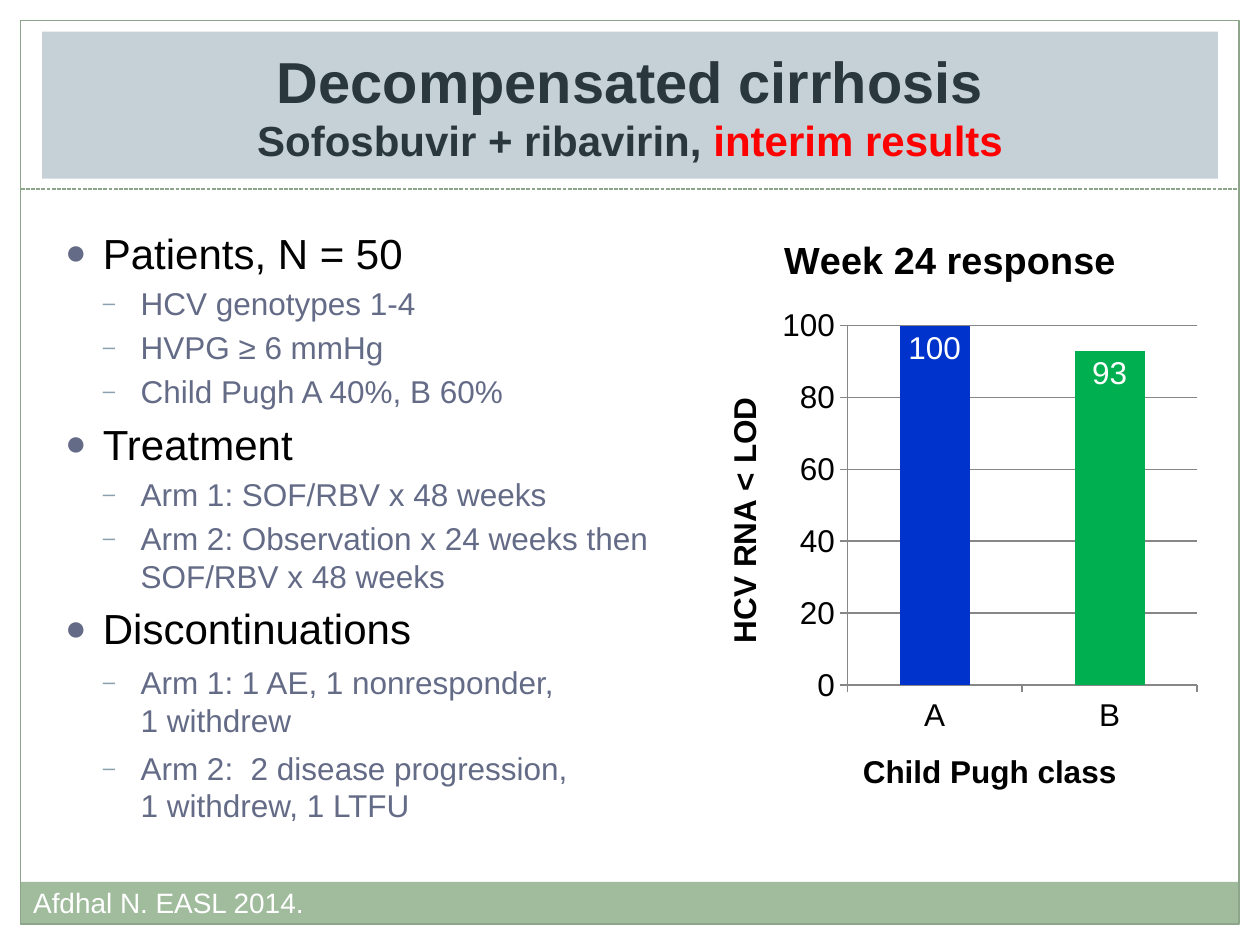
from lxml.etree import SubElement
from pptx import Presentation
from pptx.chart.data import CategoryChartData
from pptx.dml.color import RGBColor
from pptx.enum.chart import XL_CHART_TYPE, XL_LABEL_POSITION, XL_TICK_MARK
from pptx.enum.dml import MSO_LINE
from pptx.enum.shapes import MSO_CONNECTOR, MSO_SHAPE
from pptx.enum.text import MSO_ANCHOR, MSO_AUTO_SIZE, PP_ALIGN
from pptx.oxml import parse_xml
from pptx.oxml.ns import nsdecls, qn
from pptx.util import Cm, Pt

FONT = "Arial"
SAGE, SAGE_LINE = "A0BC9D", "8DA68B"
SLATE, GREY = "646B86", "878787"
MARGIN, WIDTH, HEIGHT = 0.42, 25.4, 19.05

# level: (text size, text colour, bullet, bullet colour, bullet size %, indent in cm)
LEVELS = [
    (24, "000000", "●", SLATE, 85, 0.76),
    (18, SLATE, "–", "88A1AD", 70, 1.52),
]
HANGING = 0.76

FINDINGS = [
    ("Patients, N = 50",
     ["HCV genotypes 1-4", "HVPG ≥ 6 mmHg", "Child Pugh A 40%, B 60%"]),
    ("Treatment",
     ["Arm 1: SOF/RBV x 48 weeks",
      "Arm 2: Observation x 24 weeks then SOF/RBV x 48 weeks"]),
    ("Discontinuations",
     ["Arm 1: 1 AE, 1 nonresponder, \v1 withdrew",
      "Arm 2:  2 disease progression, \v1 withdrew, 1 LTFU"]),
]


def rgb(color):
    return RGBColor.from_string(color)


def style_font(font, size, color, bold=False):
    font.name, font.size, font.bold = FONT, Pt(size), bold
    font.color.rgb = rgb(color)


def place(shape, left, top, width, height):
    shape.left, shape.top = Cm(left), Cm(top)
    shape.width, shape.height = Cm(width), Cm(height)


def add_box(slide, left, top, width, height, fill=None, line=None):
    box = slide.shapes.add_shape(
        MSO_SHAPE.RECTANGLE, Cm(left), Cm(top), Cm(width), Cm(height))
    box.shadow.inherit = False
    if fill:
        box.fill.solid()
        box.fill.fore_color.rgb = rgb(fill)
    else:
        box.fill.background()
    if line:
        box.line.color.rgb = rgb(line)
        box.line.width = Pt(0.75)
    else:
        box.line.fill.background()


def add_frame(slide):
    """Draw the footer band, the page border and the dashed rule under the title."""
    inner_width = WIDTH - 2 * MARGIN
    add_box(slide, MARGIN, 17.78, inner_width, 0.86, fill=SAGE)
    add_box(slide, MARGIN, MARGIN, inner_width, HEIGHT - 2 * MARGIN, line=SAGE_LINE)
    rule = slide.shapes.add_connector(
        MSO_CONNECTOR.STRAIGHT, Cm(MARGIN), Cm(3.81), Cm(WIDTH - MARGIN), Cm(3.81))
    rule.line.color.rgb = rgb(SAGE_LINE)
    rule.line.width = Pt(0.75)
    rule.line.dash_style = MSO_LINE.SQUARE_DOT
    SubElement(rule._element.spPr, qn("a:effectLst"))


def fill_title(title):
    place(title, 0.85, 0.64, 23.7, 2.96)
    title.fill.solid()
    title.fill.fore_color.rgb = rgb("C5D1D7")
    frame = title.text_frame
    frame.auto_size = MSO_AUTO_SIZE.NONE
    frame.vertical_anchor = MSO_ANCHOR.MIDDLE
    heading = frame.paragraphs[0]
    heading.alignment = PP_ALIGN.CENTER
    heading.text = "Decompensated cirrhosis\vSofosbuvir + ribavirin, "
    heading.add_run().text = "interim results"
    looks = [(33, "2A373D"), (24, "2A373D"), (24, "FF0000")]
    for run, (size, color) in zip(heading.runs, looks):
        style_font(run.font, size, color, bold=True)


def format_item(paragraph, level):
    size, color, bullet, bullet_color, bullet_size, indent = LEVELS[level]
    paragraph.level = level
    for run in paragraph.runs:
        style_font(run.font, size, color)
    properties = paragraph._p.get_or_add_pPr()
    properties.set("marL", str(Cm(indent)))
    properties.set("indent", str(-Cm(HANGING)))
    SubElement(SubElement(properties, qn("a:buClr")), qn("a:srgbClr"), val=bullet_color)
    SubElement(properties, qn("a:buSzPct"), val=str(bullet_size * 1000))
    SubElement(properties, qn("a:buFont"), typeface=FONT)
    SubElement(properties, qn("a:buChar"), char=bullet)


def fill_findings(body):
    place(body, 1.06, 4.45, 12.5, 13.13)
    frame = body.text_frame
    frame.auto_size = MSO_AUTO_SIZE.NONE
    items = [(text, level) for topic, details in FINDINGS
             for text, level in [(topic, 0)] + [(detail, 1) for detail in details]]
    for number, (text, level) in enumerate(items):
        paragraph = frame.add_paragraph() if number else frame.paragraphs[0]
        paragraph.text = text
        format_item(paragraph, level)


def add_citation(slide, text):
    citation = slide.shapes.add_textbox(Cm(MARGIN), Cm(17.73), Cm(24.13), Cm(0.94))
    citation.text_frame.word_wrap = True
    citation.text_frame.text = text
    style_font(citation.text_frame.paragraphs[0].runs[0].font, 16, "FFFFFF")


def set_chart_title(owner, text, size):
    """Title a chart or one of its axes."""
    owner.has_title = True
    frame = (owner.chart_title if hasattr(owner, "chart_title")
             else owner.axis_title).text_frame
    frame.text = text
    style_font(frame.paragraphs[0].runs[0].font, size, "000000", bold=True)


def format_axis(axis, title):
    set_chart_title(axis, title, 18)
    style_font(axis.tick_labels.font, 18, "000000")
    axis.major_tick_mark = XL_TICK_MARK.OUTSIDE
    axis.minor_tick_mark = XL_TICK_MARK.NONE
    axis.format.line.color.rgb = rgb(GREY)


def set_plot_area(chart, **fractions):
    """Fix the inner plot area as fractions x, y, w and h of the chart."""
    area = chart._chartSpace.chart.plotArea
    for layout in area.findall(qn("c:layout")):
        area.remove(layout)
    sizes = "".join(f'<c:{side} val="{value}"/>' for side, value in fractions.items())
    area.insert(0, parse_xml(
        f'<c:layout {nsdecls("c")}><c:manualLayout><c:layoutTarget val="inner"/>'
        f'<c:xMode val="edge"/><c:yMode val="edge"/>{sizes}'
        '</c:manualLayout></c:layout>'))


def add_response_chart(slide):
    data = CategoryChartData()
    data.categories = ["A", "B"]
    data.add_series("Series 1", [100, 93])
    chart = slide.shapes.add_chart(
        XL_CHART_TYPE.COLUMN_CLUSTERED, Cm(13.97), Cm(4.23), Cm(10.37), Cm(12.28),
        data).chart
    style_font(chart.font, 18, "000000")
    chart.has_legend = False
    set_chart_title(chart, "Week 24 response", 21.6)
    format_axis(chart.category_axis, "Child Pugh class")
    response_axis = chart.value_axis
    format_axis(response_axis, "HCV RNA < LOD")
    response_axis.minimum_scale, response_axis.maximum_scale = 0, 100
    response_axis.major_unit = 20
    response_axis.has_major_gridlines = True
    response_axis.major_gridlines.format.line.color.rgb = rgb(GREY)

    plot = chart.plots[0]
    plot.gap_width = 150
    plot.vary_by_categories = False
    response = plot.series[0]
    for number, color in enumerate(["0033CC", "00B050"]):
        bar = response.points[number].format.fill
        bar.solid()
        bar.fore_color.rgb = rgb(color)
    labels = response.data_labels
    labels.show_value = True
    labels.position = XL_LABEL_POSITION.INSIDE_END
    style_font(labels.font, 18, "FFFFFF")
    set_plot_area(chart, x=0.3, y=0.19, w=0.68, h=0.59)


def main():
    presentation = Presentation()
    presentation.slide_width, presentation.slide_height = Cm(WIDTH), Cm(HEIGHT)
    slide = presentation.slides.add_slide(presentation.slide_layouts[1])
    add_frame(slide)
    fill_title(slide.shapes.title)
    fill_findings(slide.placeholders[1])
    add_citation(slide, "Afdhal N. EASL 2014.")
    add_response_chart(slide)
    presentation.save("out.pptx")


if __name__ == "__main__":
    main()
